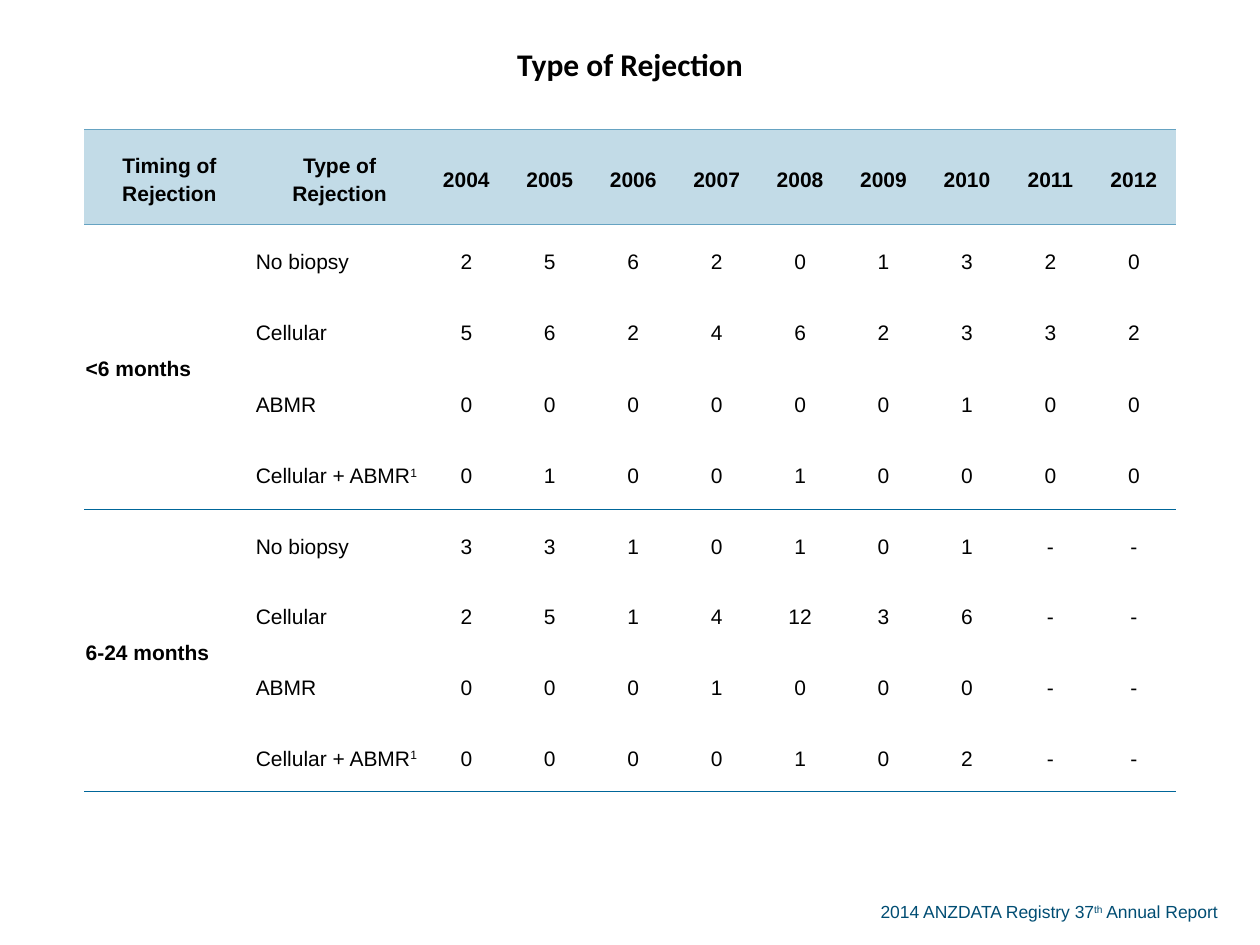
from lxml.etree import SubElement
from pptx import Presentation
from pptx.dml.color import RGBColor
from pptx.enum.text import MSO_ANCHOR as ANCHOR, MSO_AUTO_SIZE as AUTO, PP_ALIGN as ALIGN
from pptx.oxml.ns import qn
from pptx.util import Inches, Pt

YEARS = [str(year) for year in range(2004, 2013)]
TYPES = ["No biopsy", "Cellular", "ABMR", "Cellular + ABMR^1^"]
COUNTS = {
    "<6 months": ["2 5 6 2 0 1 3 2 0", "5 6 2 4 6 2 3 3 2",
                  "0 0 0 0 0 0 1 0 0", "0 1 0 0 1 0 0 0 0"],
    "6-24 months": ["3 3 1 0 1 0 1 - -", "2 5 1 4 12 3 6 - -",
                    "0 0 0 1 0 0 0 - -", "0 0 0 0 1 0 2 - -"],
}
COL_WIDTHS = [1.35, 1.35] + [5.96 / 9] * 9
ROW_HEIGHTS = [1.03, 0.75, 0.56, 0.56, 0.58] + [0.56] * 5
RULES = {1: "66A3C2", 2: "66A3C2", 6: "006699", 10: "006699"}


def rgb(value):
    return RGBColor.from_string(value)


class Deck:
    font = "Arial"
    ink = "000000"
    accent = "004D73"
    header = "C2DBE7"

    def __init__(self, prs):
        self.slide = prs.slides.add_slide(prs.slide_layouts[6])

    def add_runs(self, p, text, size, color, font=None, bold=False):
        for i, part in enumerate(text.split("^")):
            if not part:
                continue
            r = p.add_run()
            r.text = part
            r.font.size = Pt(size)
            r.font.name = font or self.font
            r.font.bold = bold
            r.font.color.rgb = rgb(color)
            if i % 2:
                r.font._element.set("baseline", "30000")

    def text(self, text, x, y, w, h, size):
        sp = self.slide.shapes.add_textbox(Inches(x), Inches(y), Inches(w), Inches(h))
        tf = sp.text_frame
        tf.word_wrap = True
        tf.auto_size = AUTO.SHAPE_TO_FIT_TEXT
        self.add_runs(tf.paragraphs[0], text, size, self.accent)

    def borders(self, cell, top, bottom):
        tc_pr = cell._tc.get_or_add_tcPr()
        for side, color in (("L", None), ("R", None), ("T", top), ("B", bottom)):
            ln = SubElement(tc_pr, qn(f"a:ln{side}"), w=str(Pt(0.5)))
            if color:
                fill = SubElement(ln, qn("a:solidFill"))
                SubElement(fill, qn("a:srgbClr"), val=color)
            else:
                SubElement(ln, qn("a:noFill"))

    def cell(self, cell, row, col, text):
        cell.margin_left = cell.margin_right = cell.margin_top = Inches(0.01)
        cell.margin_bottom = 0
        cell.vertical_anchor = ANCHOR.MIDDLE
        self.borders(cell, RULES.get(row), RULES.get(row + cell.span_height))
        if row == 1:
            cell.fill.solid()
            cell.fill.fore_color.rgb = rgb(self.header)
        else:
            cell.fill.background()
        if cell.is_spanned:
            return
        p = cell.text_frame.paragraphs[0]
        p.alignment = ALIGN.CENTER if row < 2 or col > 1 else ALIGN.LEFT
        if row == 0:
            self.add_runs(p, text, 18, self.ink, "Calibri", True)
        else:
            p.line_spacing = 1.19
            p.space_after = Pt(14)
            self.add_runs(p, text, 12, self.ink, bold=row == 1 or col == 0)

    def table(self, rows, x, y, merges):
        frame = self.slide.shapes.add_table(
            len(rows), len(COL_WIDTHS), Inches(x), Inches(y),
            Inches(sum(COL_WIDTHS)), Inches(sum(ROW_HEIGHTS)))
        table = frame.table
        table.first_row = table.horz_banding = False
        for column, width in zip(table.columns, COL_WIDTHS):
            column.width = Inches(width)
        for row, height in zip(table.rows, ROW_HEIGHTS):
            row.height = Inches(height)
        for start, end in merges:
            table.cell(*start).merge(table.cell(*end))
        for i, row in enumerate(rows):
            for j, text in enumerate(row):
                self.cell(table.cell(i, j), i, j, text)


def main():
    prs = Presentation()
    prs.slide_width, prs.slide_height = Inches(10), Inches(7.5)
    deck = Deck(prs)
    deck.text("2014 ANZDATA Registry 37^th^ Annual Report", 6.89, 7.1, 2.99, 0.27, 10)
    rows = [["Type of Rejection"] + [""] * 10,
            ["Timing of Rejection", "Type of Rejection"] + YEARS]
    for timing, counts in COUNTS.items():
        rows += [[timing, kind] + line.split() for kind, line in zip(TYPES, counts)]
    deck.table(rows, 0.67, 0, [((0, 0), (0, 10)), ((2, 0), (5, 0)), ((6, 0), (9, 0))])
    prs.save("out.pptx")


if __name__ == "__main__":
    main()
